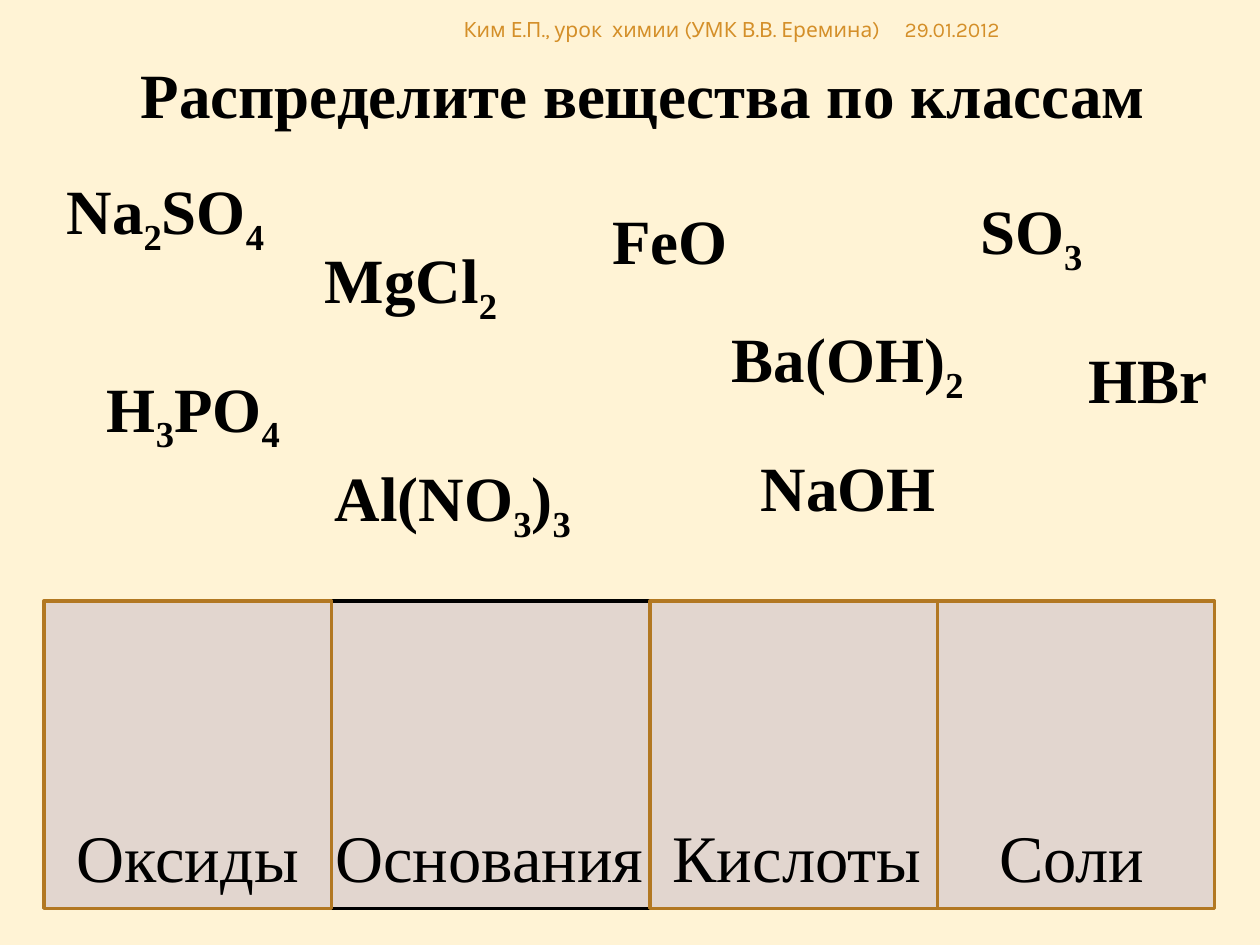
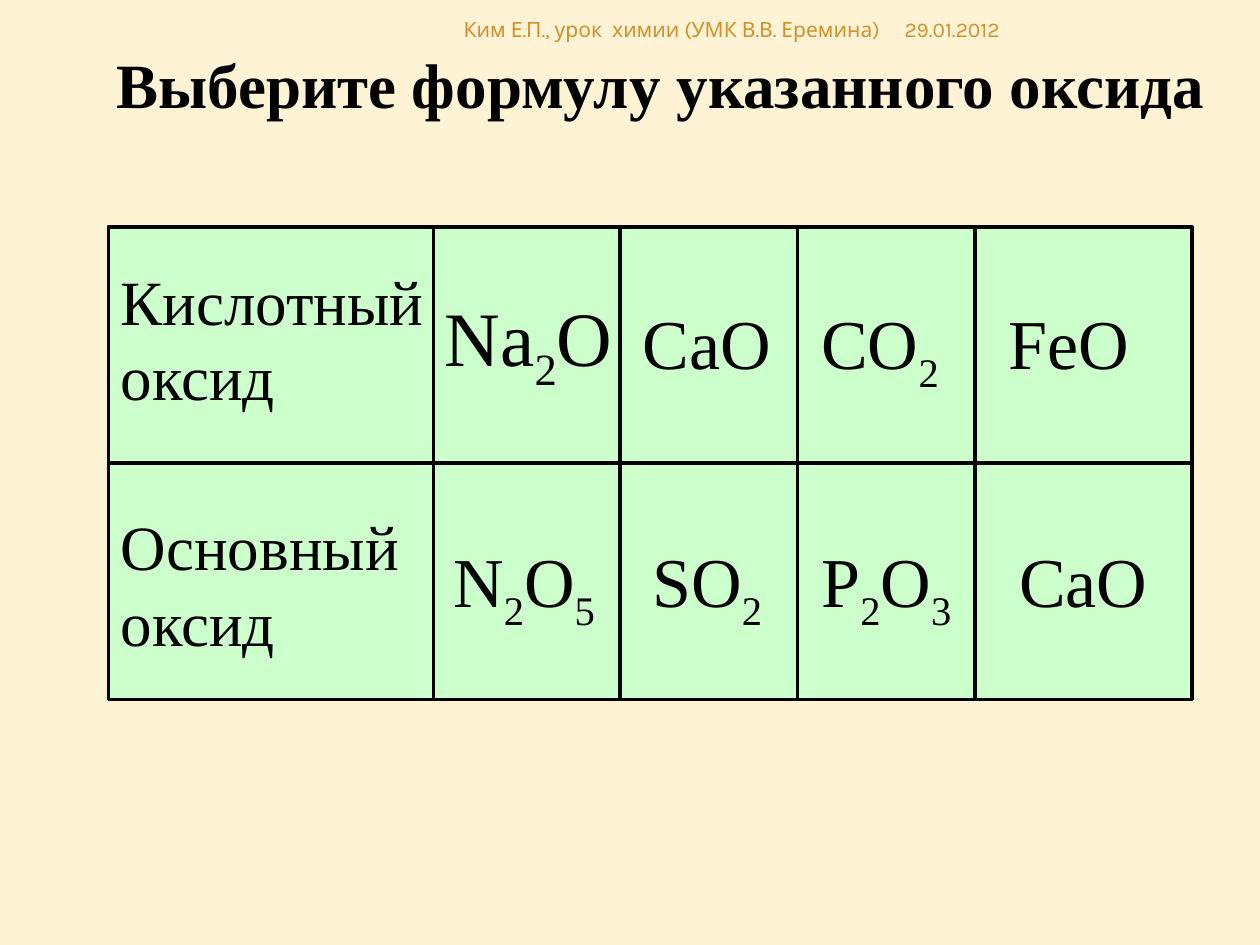
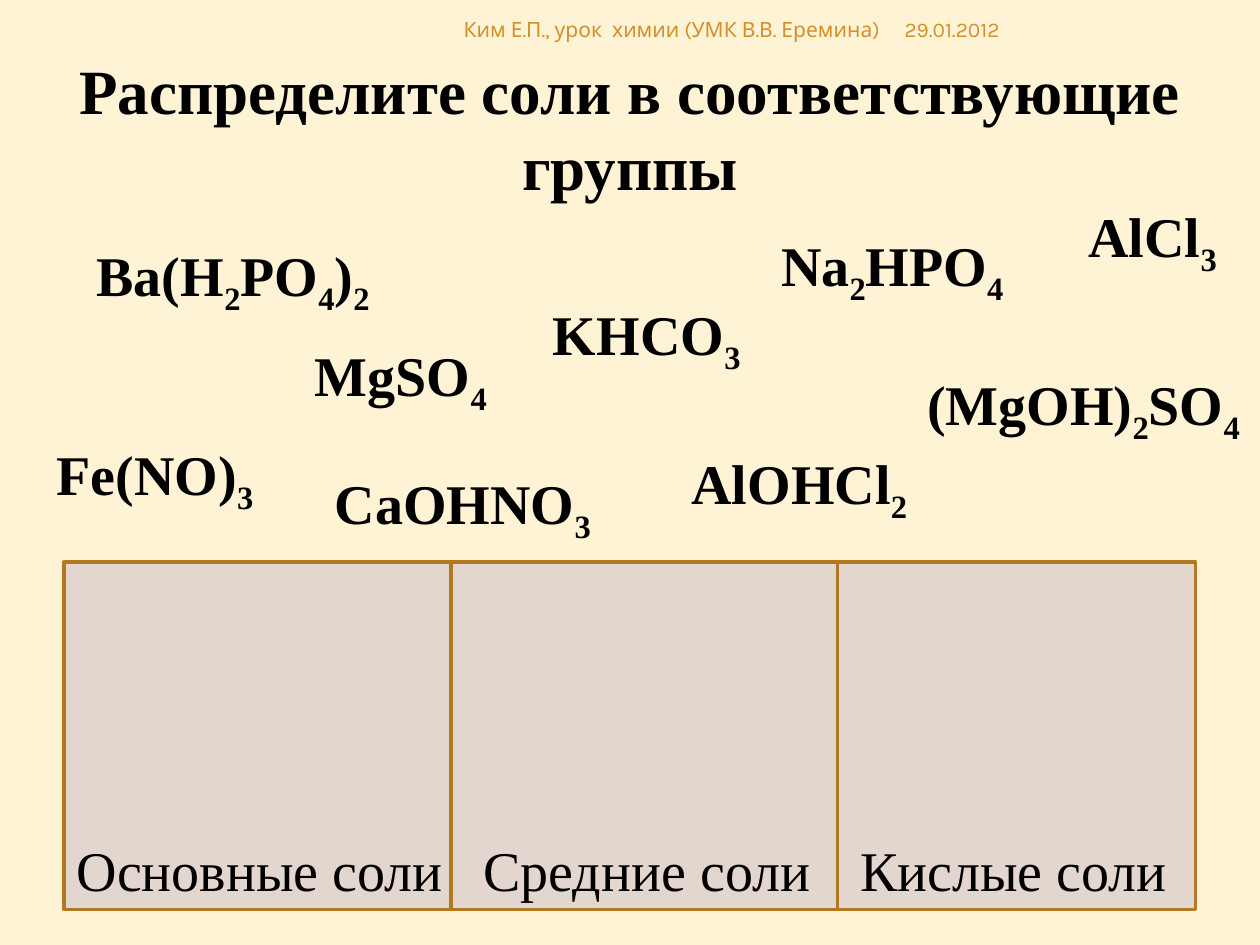
from itertools import accumulate, groupby

from pptx import Presentation
from pptx.dml.color import RGBColor
from pptx.enum import shapes, text
from pptx.util import Pt

COLORS = {
    "paper": "FFF3D5",
    "ink": "000000",
    "bin": "E2D6CF",
    "edge": "B27822",
    "cell": "CCFFCC",
    "note": "D48F29",
}
SERIF, SANS = "Times New Roman", "Karla"
LEFT, MID, RIGHT = text.PP_ALIGN.LEFT, text.PP_ALIGN.CENTER, text.PP_ALIGN.RIGHT


def tint(name):
    return RGBColor.from_string(COLORS[name])


def write(slide, words, x, y, w, size, bold=False, wrap=False, lines=1,
          align=LEFT, font=SERIF, color="ink", sub=False):
    """Add a text box; with sub, digits are set as subscripts."""
    high = size * 1.2 * lines + 7.5
    box = slide.shapes.add_textbox(Pt(x), Pt(y), Pt(w), Pt(high))
    frame = box.text_frame
    frame.word_wrap = wrap
    frame.auto_size = text.MSO_AUTO_SIZE.SHAPE_TO_FIT_TEXT
    para = frame.paragraphs[0]
    para.alignment = align
    parts = groupby(words, str.isdigit) if sub else [(False, words)]
    for low, chars in parts:
        run = para.add_run()
        run.text = "".join(chars)
        if low:
            run._r.get_or_add_rPr().set("baseline", "-25000")
    para.font.name = font
    para.font.size = Pt(size)
    para.font.bold = bold
    para.font.color.rgb = tint(color)


def block(slide, x, y, w, h, fill, line):
    rect = slide.shapes.add_shape(shapes.MSO_SHAPE.RECTANGLE,
                                  Pt(x), Pt(y), Pt(w), Pt(h))
    rect.shadow.inherit = False
    rect.fill.solid()
    rect.fill.fore_color.rgb = tint(fill)
    rect.line.color.rgb = tint(line)
    rect.line.width = Pt(2)


def start(deck):
    """Add a slide with the shared background and header."""
    slide = deck.slides.add_slide(deck.slide_layouts[6])
    slide.background.fill.solid()
    slide.background.fill.fore_color.rgb = tint("paper")
    for words, x, w, align in (
            ("29.01.2012", 509.8, 198, LEFT),
            ("Ким Е.П., урок  химии (УМК В.В. Еремина)", 246.2, 264, RIGHT)):
        write(slide, words, x, 5.8, w, 12, wrap=True, align=align,
              font=SANS, color="note")
    return slide


def title(slide, words, x, y, w, **look):
    write(slide, words, x, y, w, 36, bold=True, **look)


def bins(slide, top, high, drop, size, items):
    """Draw sorting bins, each with a label set drop below the top."""
    for name, x, w, shift, wide, line in items:
        block(slide, x, top, w, high, "bin", line)
        write(slide, name, x + shift, top + drop, wide, size)


def scatter(slide, size, items):
    for words, x, y, w in items:
        write(slide, words, x, y, w, size, bold=True, sub=True)


def grid(slide, left, top, widths, high, rows):
    """Draw rows of cells; texts are placed relative to their cell."""
    edges = list(accumulate(widths, initial=left))
    for i, row in enumerate(rows):
        y = top + i * high
        for x, w in zip(edges, widths):
            block(slide, x, y, w, high, "cell", "ink")
        label, drop = row[0]
        write(slide, label, left, y + drop, 191.5, 36, wrap=True, lines=2)
        for x, (words, dx, dy, w, size) in zip(edges[1:], row[1:]):
            write(slide, words, x + dx, y + dy, w, size, sub=True)


def classes(deck):
    slide = start(deck)
    title(slide, "Распределите вещества по классам", 73.4, 28.1, 594.7)
    bins(slide, 343.4, 175.7, 119.5, 38, [
        ("Основания", 189.4, 181.8, -5, 193, "ink"),
        ("Соли", 535.7, 158.4, 28.1, 98.6, "edge"),
        ("Оксиды", 25.2, 164.2, 11.5, 143.3, "edge"),
        ("Кислоты", 371.5, 164.2, 5.8, 158.4, "edge"),
    ])
    scatter(slide, 36, [
        ("SO3", 553, 105.8, 74.9),
        ("Ва(ОН)2", 411.1, 179.3, 149.8),
        ("MgCl2", 178.6, 133.9, 115.2),
        ("H3PO4", 54, 207.4, 117.4),
        ("Na2SO4", 31, 94.3, 131.8),
        ("FeO", 342.7, 111.6, 81.4),
        ("HBr", 614.9, 190.8, 83.5),
        ("NaОН", 427.7, 252.7, 115.2),
        ("Al(NO3)3", 184.3, 258.5, 154.1),
    ])


def oxides(deck):
    slide = start(deck)
    title(slide, "Выберите формулу указанного оксида", 56.2, 22.3, 642.2,
          align=MID)
    grid(slide, 61.9, 129.6, [185.8, 106.6, 101.5, 101.5, 123.8], 135, [
        [("Кислотный оксид", 16.6),
         ("Na2O", -0.7, 32.4, 113, 44),
         ("CaO", 5.8, 38.2, 88.6, 40),
         ("CO2", 6.5, 38.2, 84.2, 40),
         ("FeO", 12.2, 38.2, 84.2, 40)],
        [("Основный оксид", 22),
         ("N2O5", 4.3, 39.2, 100, 40),
         ("SO2", 11.5, 39.2, 79.9, 40),
         ("P2O3", 6.5, 39.2, 92.9, 40),
         ("CaO", 18, 39.2, 88.6, 40)],
    ])


def salts(deck):
    slide = start(deck)
    bins(slide, 321.1, 198.7, 152.6, 32, [
        ("Основные соли", 36.7, 221, 0, 226.1, "edge"),
        ("Средние соли", 257.7, 221, 11.5, 203, "edge"),
        ("Кислые соли", 478.7, 204.6, 5.8, 191.5, "edge"),
    ])
    title(slide, "Распределите соли в соответствующие группы",
          36.7, 25.9, 646.6, wrap=True, lines=2, align=MID)
    scatter(slide, 32, [
        ("Ba(H2PO4)2", 48.2, 133.9, 175.7),
        ("MgSO4", 172.8, 190.8, 115.2),
        ("Fe(NO)3", 25.2, 247.7, 129.6),
        ("KHCO3", 308.9, 167.8, 123.8),
        ("CaOHNO3", 184.3, 264.2, 163.4),
        ("AlOHCl2", 388.1, 252.7, 140.4),
        ("Na2HPO4", 439.2, 128.2, 145.4),
        ("AlCl3", 614.9, 111.6, 90),
        ("(MgOH)2SO4", 522.7, 207.4, 197.3),
    ])


def main():
    deck = Presentation()
    deck.slide_width, deck.slide_height = Pt(720), Pt(540)
    for make in (classes, oxides, salts):
        make(deck)
    deck.save("out.pptx")


if __name__ == "__main__":
    main()
